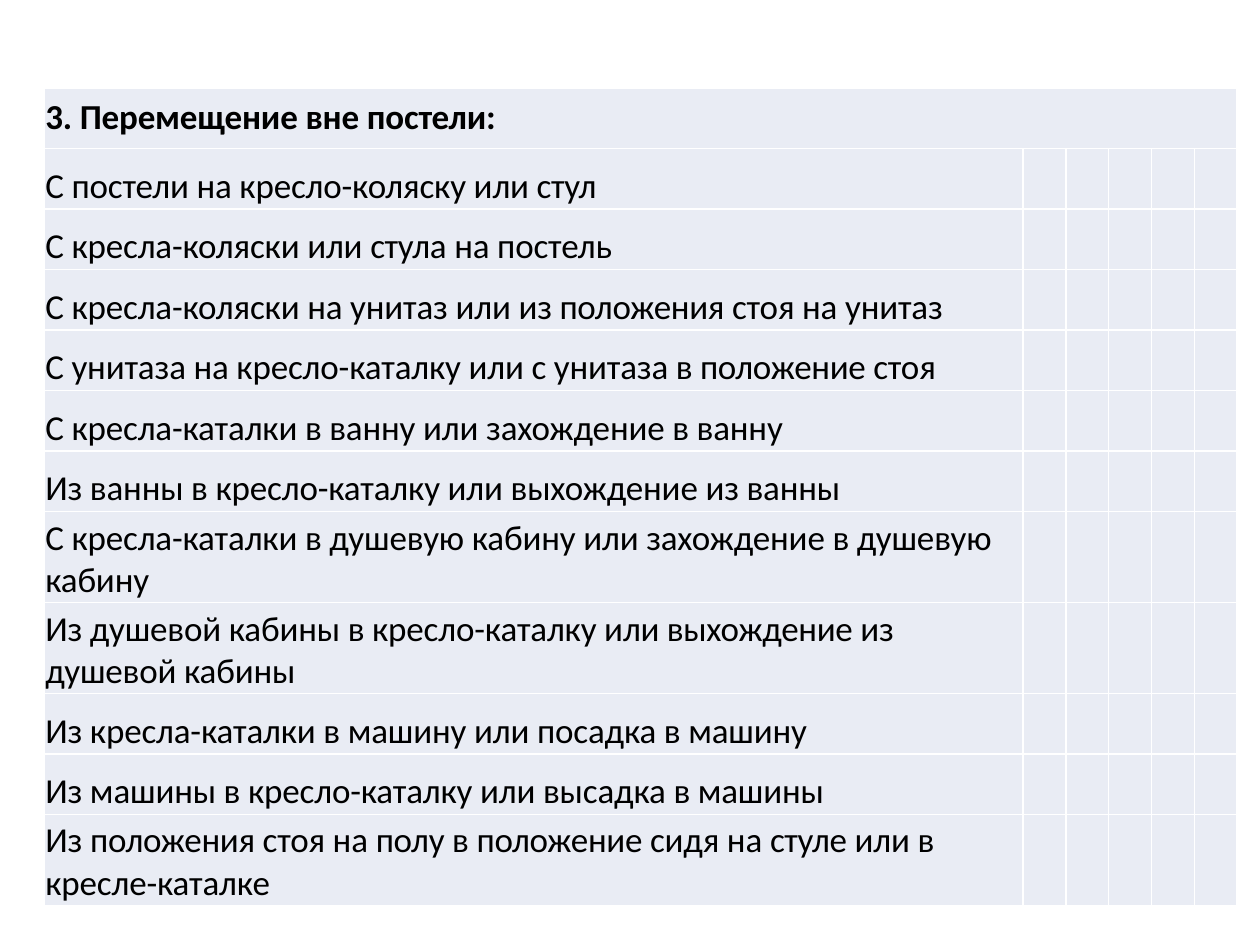
from lxml import etree
from pptx import Presentation
from pptx import util as u
from pptx.dml.color import RGBColor
from pptx.oxml.ns import qn

BLACK = RGBColor(0x00, 0x00, 0x00)
WHITE = RGBColor(0xFF, 0xFF, 0xFF)
PALE = RGBColor(0xE9, 0xEC, 0xF4)

HEADING = "3. Перемещение вне постели:"
# One tuple of lines per row; text between bars is set tighter.
TRANSFERS = [
    ("С постели на кресло-коляску или |стул|",),
    ("С кресла-коляски или |стула |на постель",),
    ("С кресла-коляски на унитаз или из |положения |стоя на унитаз",),
    ("С унитаза на кресло-каталку или с унитаза в |положение |стоя",),
    ("С кресла-каталки в ванну или захождение в ванну",),
    ("Из ванны в кресло-каталку или выхождение из ванны",),
    ("С кресла-каталки в душевую кабину или захождение в душевую", "кабину"),
    ("Из душевой кабины в кресло-каталку или |выхождение |из",
     "душевой кабины"),
    ("Из кресла-каталки в машину или посадка в машину",),
    ("Из машины в кресло-каталку или высадка в машины",),
    ("Из |положения |стоя на |полу |в |положение |сидя на |стуле |или в",
     "кресле-каталке"),
]
SCORES = 5
LEFT, TOP = 0.35, 0.7
TEXT_W, SCORE_W = 7.77, 0.34
ROW_H = {1: 0.48, 2: 0.72}  # by number of lines
SPACE_BEFORE = {1: 9.3, 2: 3}
HEADING_SPACE = 4.3
SPACING, TIGHT = -10, -20  # hundredths of a point


def style_cell(cell):
    tc_pr = cell._tc.get_or_add_tcPr()
    for side in ("lnL", "lnR", "lnT", "lnB"):
        ln = etree.SubElement(tc_pr, qn("a:" + side), w=str(u.Pt(1)))
        fill = etree.SubElement(ln, qn("a:solidFill"))
        etree.SubElement(fill, qn("a:srgbClr"), val=str(WHITE))
    cell.fill.solid()
    cell.fill.fore_color.rgb = PALE


def write_lines(cell, lines, before, bold=False):
    cell.margin_left = cell.margin_right = cell.margin_bottom = 0
    cell.margin_top = u.Pt(before)
    tf = cell.text_frame
    for i, line in enumerate(lines):
        p = tf.add_paragraph() if i else tf.paragraphs[0]
        p.space_before = u.Pt(0 if i else before)
        p._p.get_or_add_pPr().set("marL", str(u.Inches(0.01)))
        for j, part in enumerate(line.split("|")):
            if not part:
                continue
            r = p.add_run()
            r.text = part
            r.font.name, r.font.size, r.font.bold = "Calibri", u.Pt(20), bold
            r.font.color.rgb = BLACK
            r._r.get_or_add_rPr().set("spc", str(TIGHT if j % 2 else SPACING))


prs = Presentation()
prs.slide_width, prs.slide_height = u.Inches(10), u.Inches(7.5)
s = prs.slides.add_slide(prs.slide_layouts[6])

widths = [TEXT_W] + [SCORE_W] * SCORES
heights = [ROW_H[1]] + [ROW_H[len(lines)] for lines in TRANSFERS]
table = s.shapes.add_table(
    len(heights), len(widths), u.Inches(LEFT), u.Inches(TOP),
    u.Inches(sum(widths)), u.Inches(sum(heights))).table
table.first_row = table.horz_banding = False
for col, width in zip(table.columns, widths):
    col.width = u.Inches(width)
for row, height in zip(table.rows, heights):
    row.height = u.Inches(height)
for cell in table.iter_cells():
    style_cell(cell)

table.cell(0, 0).merge(table.cell(0, SCORES))
write_lines(table.cell(0, 0), [HEADING], HEADING_SPACE, bold=True)
for i, lines in enumerate(TRANSFERS, 1):
    write_lines(table.cell(i, 0), lines, SPACE_BEFORE[len(lines)])

prs.save("out.pptx")
